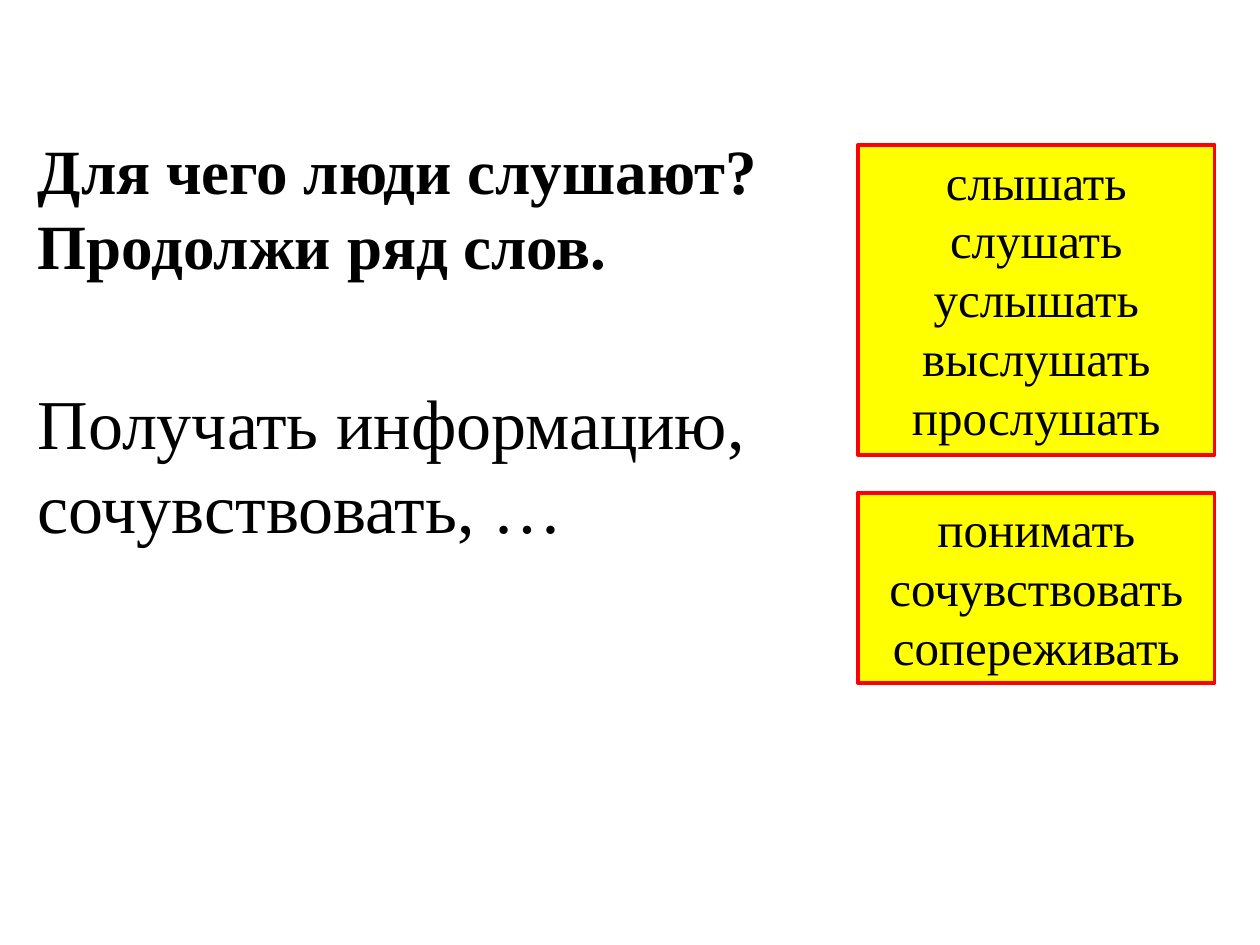
"""Build a slide asking why people listen, with two yellow boxes of verbs."""
from dataclasses import dataclass

from pptx import Presentation
from pptx.dml.color import RGBColor as Rgb
from pptx.enum.shapes import MSO_SHAPE as Shape
from pptx.enum.text import MSO_ANCHOR as Anchor, MSO_AUTO_SIZE as AutoSize, PP_ALIGN as Align
from pptx.slide import Slide
from pptx.text.text import TextFrame
from pptx.util import Inches, Pt

COLORS = {"text": "000000", "box": "FFFF00", "border": "FF0000"}
FONT = "Times New Roman"
TEXT_LEFT = 0.2
BOX_LEFT, BOX_WIDTH = 6.81, 2.83


@dataclass(frozen=True)
class VerbBox:
    top: float
    height: float
    verbs: tuple[str, ...]


VERB_BOXES = (
    VerbBox(1.15, 2.46, ("слышать", "слушать", "услышать", "выслушать", "прослушать")),
    VerbBox(3.91, 1.51, ("понимать", "сочувствовать", "сопереживать")),
)


def write_lines(frame: TextFrame, lines: tuple[str, ...], size: int,
                bold: bool = False, align: Align = Align.LEFT) -> None:
    """Fill a text frame with one paragraph per line."""
    frame_format = {"word_wrap": True, "auto_size": AutoSize.NONE, "vertical_anchor": Anchor.TOP}
    for attribute, value in frame_format.items():
        setattr(frame, attribute, value)
    frame.text = "\n".join(lines)
    font_format = {"name": FONT, "size": Pt(size), "bold": bold}
    for paragraph in frame.paragraphs:
        paragraph.alignment = align
        for run in paragraph.runs:
            for attribute, value in font_format.items():
                setattr(run.font, attribute, value)
            run.font.color.rgb = Rgb.from_string(COLORS["text"])


def draw_verb_box(slide: Slide, verb_box: VerbBox) -> None:
    """Draw a bordered box with centred verbs."""
    box = slide.shapes.add_shape(Shape.RECTANGLE, Inches(BOX_LEFT), Inches(verb_box.top),
                                 Inches(BOX_WIDTH), Inches(verb_box.height))
    box.shadow.inherit = False
    box.fill.solid()
    box.fill.fore_color.rgb = Rgb.from_string(COLORS["box"])
    box.line.color.rgb = Rgb.from_string(COLORS["border"])
    box.line.width = Pt(2.25)
    write_lines(box.text_frame, verb_box.verbs, 28, align=Align.CENTER)


def main() -> None:
    """Assemble and save the slide."""
    deck = Presentation()
    deck.slide_width, deck.slide_height = Inches(10), Inches(7.5)
    slide = deck.slides.add_slide(deck.slide_layouts[5])

    question = slide.shapes.title
    place = {"left": TEXT_LEFT, "top": 0.99, "width": 6.22, "height": 1.31}
    for attribute, value in place.items():
        setattr(question, attribute, Inches(value))
    write_lines(question.text_frame, ("Для чего люди слушают?", "Продолжи ряд слов."), 36, bold=True)

    for verb_box in VERB_BOXES:
        draw_verb_box(slide, verb_box)

    reasons = slide.shapes.add_textbox(Inches(TEXT_LEFT), Inches(2.96), Inches(6.14), Inches(1.45))
    write_lines(reasons.text_frame, ("Получать информацию, сочувствовать, …",), 40)

    deck.save("out.pptx")


if __name__ == "__main__":
    main()
